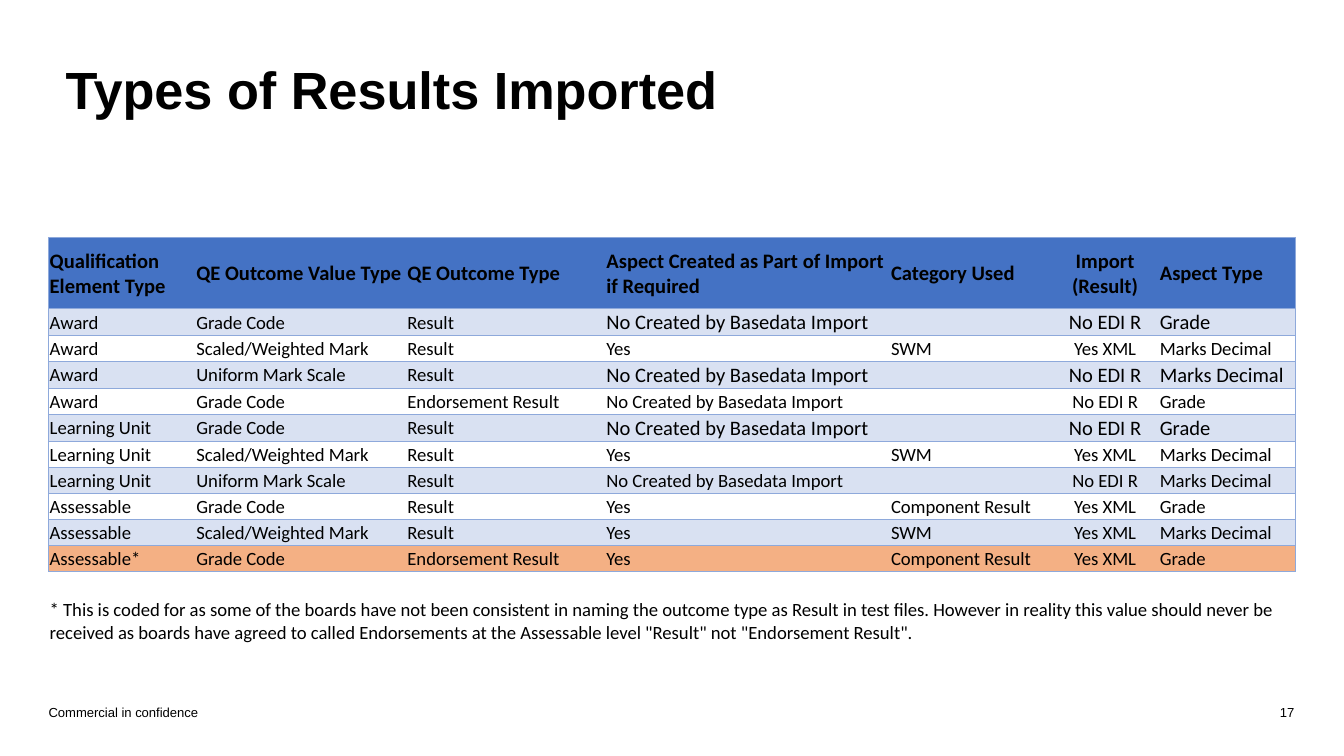
from dataclasses import dataclass

from lxml.etree import SubElement
from pptx import Presentation
from pptx.dml.color import RGBColor
from pptx.enum.text import MSO_ANCHOR, PP_ALIGN
from pptx.oxml.ns import qn
from pptx.util import Cm, Pt


@dataclass(frozen=True)
class Theme:
    text: str = "000000"
    header: str = "4472C4"
    band: str = "D9E1F2"
    highlight: str = "F4B084"
    border: str = "8EA9DB"
    heading_font: str = "Arial"
    table_font: str = "Calibri"
    title_size: int = 28
    header_size: int = 11
    large_size: int = 11
    body_size: int = 10
    footer_size: int = 7
    border_width: float = 0.5


THEME = Theme()
NO_TABLE_STYLE = "{2D5ABB26-0587-4C30-8999-92F81FD0307C}"

COLUMN_WIDTHS = (2.77, 3.99, 3.76, 5.38, 3.05, 2.03, 2.59)
HEADER_HEIGHT, LARGE_HEIGHT, ROW_HEIGHT, NOTE_HEIGHT = 1.34, 0.51, 0.49, 0.89
IMPORT_COLUMN = 5
LARGE_ROWS = (1, 3, 5)
LARGE_FROM_COLUMN = 3

BASEDATA = "No Created by Basedata Import"
HEADERS = ("Qualification Element Type", "QE Outcome Value Type", "QE Outcome Type",
           "Aspect Created as Part of Import if Required", "Category Used",
           "Import (Result)", "Aspect Type")
RESULTS = (
    ("Award", "Grade Code", "Result", BASEDATA, "", "No EDI R", "Grade"),
    ("Award", "Scaled/Weighted Mark", "Result", "Yes", "SWM", "Yes XML", "Marks Decimal"),
    ("Award", "Uniform Mark Scale", "Result", BASEDATA, "", "No EDI R", "Marks Decimal"),
    ("Award", "Grade Code", "Endorsement Result", BASEDATA, "", "No EDI R", "Grade"),
    ("Learning Unit", "Grade Code", "Result", BASEDATA, "", "No EDI R", "Grade"),
    ("Learning Unit", "Scaled/Weighted Mark", "Result", "Yes", "SWM", "Yes XML", "Marks Decimal"),
    ("Learning Unit", "Uniform Mark Scale", "Result", BASEDATA, "", "No EDI R", "Marks Decimal"),
    ("Assessable", "Grade Code", "Result", "Yes", "Component Result", "Yes XML", "Grade"),
    ("Assessable", "Scaled/Weighted Mark", "Result", "Yes", "SWM", "Yes XML", "Marks Decimal"),
    ("Assessable*", "Grade Code", "Endorsement Result", "Yes", "Component Result", "Yes XML", "Grade"),
)
NOTE = ("* This is coded for as some of the boards have not been consistent in naming the "
        "outcome type as Result in test files. However in reality this value should never be "
        "received as boards have agreed to called Endorsements at the Assessable level "
        '"Result" not "Endorsement Result".')


def write_text(frame, text, font, size, bold=False, align=PP_ALIGN.LEFT):
    frame.text = text
    para = frame.paragraphs[0]
    para.alignment = align
    for span in para.runs:
        span.font.name = font
        span.font.size = Pt(size)
        span.font.bold = bold
        span.font.color.rgb = RGBColor.from_string(THEME.text)
    if not text:
        SubElement(para._p, qn("a:endParaRPr"), sz=str(size * 100))
    return para


def add_title(page, text):
    box = page.shapes.add_textbox(Cm(0.99), Cm(0.89), Cm(23.5), Cm(1.52))
    box.text_frame.word_wrap = True
    box.text_frame.vertical_anchor = MSO_ANCHOR.BOTTOM
    para = write_text(box.text_frame, text, THEME.heading_font, THEME.title_size, bold=True)
    para.line_spacing = 0.9


def add_footer(page, text, left, width, align=PP_ALIGN.LEFT):
    box = page.shapes.add_textbox(Cm(left), Cm(13.31), Cm(width), Cm(0.3))
    frame = box.text_frame
    frame.word_wrap = True
    frame.vertical_anchor = MSO_ANCHOR.MIDDLE
    frame.margin_left = frame.margin_right = frame.margin_top = frame.margin_bottom = 0
    write_text(frame, text, THEME.heading_font, THEME.footer_size, align=align)


def set_borders(cell, sides):
    properties = cell._tc.get_or_add_tcPr()
    for position, side in enumerate(side for side in "LRTB" if side in sides):
        line = SubElement(properties, qn(f"a:ln{side}"), w=str(Pt(THEME.border_width)))
        fill = SubElement(line, qn("a:solidFill"))
        SubElement(fill, qn("a:srgbClr"), val=THEME.border)
        properties.insert(position, line)


def fill_cell(cell, text, size, color=None, bold=False, align=PP_ALIGN.LEFT):
    cell.margin_left = cell.margin_right = cell.margin_top = Cm(0.02)
    cell.margin_bottom = 0
    cell.vertical_anchor = MSO_ANCHOR.MIDDLE
    write_text(cell.text_frame, text, THEME.table_font, size, bold, align)
    if color:
        cell.fill.solid()
        cell.fill.fore_color.rgb = RGBColor.from_string(color)
    else:
        cell.fill.background()


def row_color(row):
    if row == 0:
        return THEME.header
    if row == len(RESULTS):
        return THEME.highlight
    return THEME.band if row % 2 else None


def cell_size(row, column):
    if row == 0:
        return THEME.header_size
    large = row in LARGE_ROWS and column >= LARGE_FROM_COLUMN
    return THEME.large_size if large else THEME.body_size


def cell_sides(row, column):
    sides = "T" if row == len(RESULTS) else "TB"
    if column == 0:
        sides += "L"
    if column == len(HEADERS) - 1:
        sides += "R"
    return sides


def add_results_table(page):
    records = (HEADERS, *RESULTS)
    gap_row, note_row = len(records), len(records) + 1
    heights = [HEADER_HEIGHT]
    heights += [LARGE_HEIGHT if row in LARGE_ROWS else ROW_HEIGHT for row in range(1, note_row)]
    heights.append(NOTE_HEIGHT)

    frame = page.shapes.add_table(len(heights), len(HEADERS), Cm(0.92), Cm(4.49),
                                  Cm(sum(COLUMN_WIDTHS)), Cm(sum(heights)))
    table = frame.table
    table.first_row = table.horz_banding = False
    table._tbl.tblPr.find(qn("a:tableStyleId")).text = NO_TABLE_STYLE
    for column, width in zip(table.columns, COLUMN_WIDTHS):
        column.width = Cm(width)
    for row, height in zip(table.rows, heights):
        row.height = Cm(height)

    for row, record in enumerate(records):
        for column, text in enumerate(record):
            cell = table.cell(row, column)
            align = PP_ALIGN.CENTER if column == IMPORT_COLUMN else PP_ALIGN.LEFT
            fill_cell(cell, text, cell_size(row, column), row_color(row), row == 0, align)
            set_borders(cell, cell_sides(row, column))

    for row in (gap_row, note_row):
        for column in range(len(HEADERS)):
            fill_cell(table.cell(row, column), "", THEME.body_size)
    note = table.cell(note_row, 0)
    note.merge(table.cell(note_row, len(HEADERS) - 1))
    fill_cell(note, NOTE, THEME.body_size)
    note.vertical_anchor = MSO_ANCHOR.BOTTOM


def main():
    deck = Presentation()
    deck.slide_width, deck.slide_height = Cm(25.4), Cm(14.28)
    page = deck.slides.add_slide(deck.slide_layouts[6])
    add_footer(page, "Commercial in confidence", 0.92, 11.43)
    add_title(page, "Types of Results Imported")
    add_footer(page, "17", 23.47, 0.99, PP_ALIGN.RIGHT)
    add_results_table(page)
    deck.save("out.pptx")


if __name__ == "__main__":
    main()
